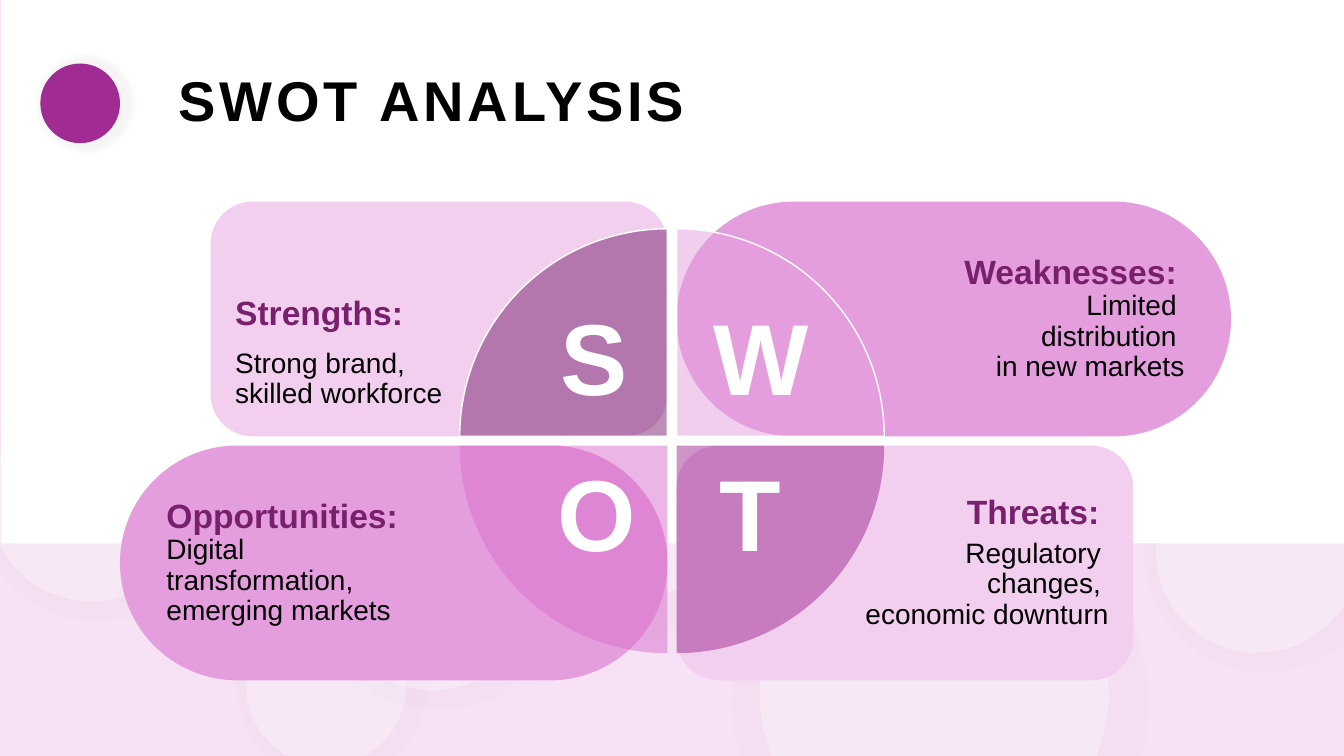
"""Build a SWOT analysis slide with four panels around a quartered circle."""
from dataclasses import dataclass
from math import acos, cos, pi, sin

from lxml import etree
from pptx import Presentation
from pptx import util as u
from pptx.dml.color import RGBColor
from pptx.enum import shapes, text
from pptx.oxml import ns

KIND = shapes.MSO_SHAPE
ALIGN = text.PP_ALIGN


@dataclass(frozen=True)
class Theme:
    font: str = "Arial"
    white: str = "FFFFFF"
    black: str = "000000"
    backdrop: str = "F7E2F5"
    pale: str = "F2CFEE"
    pink: str = "E59EDD"
    orchid: str = "D86ECC"
    purple: str = "A02B93"
    plum: str = "78206E"


THEME = Theme()
STYLES = {
    "title": (40, THEME.black, True),
    "heading": (24, THEME.plum, True),
    "body": (20, THEME.black, False),
    "spacer": (80, THEME.white, False),
    "letter": (72, THEME.white, True),
}
WIDTH, HEIGHT = 13.33, 7.5
HORIZON = 5.39
LEFT_EDGE, RIGHT_EDGE = 6.62, 6.71
UPPER_EDGE, LOWER_EDGE = 4.33, 4.42
PANEL_HEIGHT, WEDGE = 2.33, 2.06
ROUNDED, PILL = 0.179, 0.5
ARC_STEPS = 24

BUBBLES = [
    (4.21, 2.55, 3.47), (11.46, 4.45, 2.03), (-0.11, 3.94, 2.03),
    (2.44, 6.01, 1.59), (7.53, 5.13, 3.47), (3.27, 4.82, 2.03),
]
PANELS = [
    dict(right=True, lower=True, width=4.53, corner=ROUNDED, fill=THEME.pale, paragraphs=[
        [("Threats: ", "heading")],
        [("Regulatory \vchanges, \veconomic downturn", "body")]]),
    dict(right=False, lower=False, width=4.53, corner=ROUNDED, fill=THEME.pale, paragraphs=[
        [("Strengths:", "heading"), (" \v", "spacer"),
         ("Strong brand, \vskilled workforce", "body")]]),
    dict(right=False, lower=True, width=5.43, corner=PILL, fill=THEME.pink, paragraphs=[
        [("Opportunities: \v", "heading"),
         ("Digital \vtransformation, \vemerging markets", "body")]]),
    dict(right=True, lower=False, width=5.5, corner=PILL, fill=THEME.pink, paragraphs=[
        [("Weaknesses:", "heading"),
         (" \vLimited \vdistribution \vin new markets", "body")]]),
]
WEDGES = [
    dict(letter="S", right=False, lower=False, turn=0, fill=THEME.plum, body={}),
    dict(letter="O", right=False, lower=True, turn=270, fill=THEME.orchid, body={"vert": "vert"}),
    dict(letter="T", right=True, lower=True, turn=180, fill=THEME.purple, body={"rot": "10800000"}),
    dict(letter="W", right=True, lower=False, turn=90, fill=THEME.pink, body={"vert": "vert270"}),
]


def apply(target, **values):
    """Set each named attribute on the target."""
    for name, value in values.items():
        setattr(target, name, value)


def add_node(parent, tag, **attributes):
    """Append a DrawingML element."""
    return etree.SubElement(parent, ns.qn(f"a:{tag}"), {k: str(v) for k, v in attributes.items()})


def paint(shape, color, opacity=100, shadow=False):
    """Give a shape its fill, no outline and an optional soft shadow."""
    shape.shadow.inherit = False
    shape.fill.solid()
    shape.fill.fore_color.rgb = RGBColor.from_string(color)
    shape.line.fill.background()
    properties = shape._element.spPr
    if opacity < 100:
        add_node(properties.find(f"{ns.qn('a:solidFill')}/{ns.qn('a:srgbClr')}"),
                 "alpha", val=opacity * 1000)
    if shadow:
        glow = add_node(properties.find(ns.qn("a:effectLst")), "outerShdw",
                        blurRad=u.Pt(4), dist=u.Pt(4), dir=0, sx=119000, sy=119000,
                        algn="ctr", rotWithShape=0)
        add_node(add_node(glow, "srgbClr", val=THEME.black), "alpha", val=4000)
    return shape


def add_preset(slide, kind, *box):
    """Add a preset shape from lengths in inches."""
    return slide.shapes.add_shape(kind, *map(u.Inches, box))


def add_bubble(slide, left, top, size):
    """Add a circle, cut straight where it meets a slide edge."""
    radius = size / 2
    x, y = left + radius, top + radius
    reach, facing = min((WIDTH - x, 0), (HEIGHT - y, pi / 2), (x, pi))
    if reach >= radius:
        bubble = add_preset(slide, KIND.OVAL, left, top, size, size)
    else:
        half = acos(reach / radius)
        angles = [facing + half + 2 * (pi - half) * step / ARC_STEPS
                  for step in range(ARC_STEPS + 1)]
        rim = [(u.Inches(x + radius * cos(angle)), u.Inches(y + radius * sin(angle)))
               for angle in angles]
        outline = slide.shapes.build_freeform(*rim[0])
        outline.add_line_segments(rim[1:], close=True)
        bubble = outline.convert_to_shape()
    paint(bubble, THEME.white, 30, shadow=True)


def write(paragraph, pieces, align, **spacing):
    """Fill a paragraph with styled pieces and their line breaks."""
    apply(paragraph, alignment=align, **spacing)
    for words, style in pieces:
        size, color, bold = STYLES[style]
        for number, line in enumerate(words.split("\v")):
            if number:
                paragraph.add_line_break()
            if line:
                run = paragraph.add_run()
                run.text = line
                apply(run.font, name=THEME.font, size=u.Pt(size), bold=bold)
                run.font.color.rgb = RGBColor.from_string(color)


def frame_of(shape, inset):
    """Prepare the text frame of a shape."""
    frame = shape.text_frame
    apply(frame, word_wrap=True, vertical_anchor=text.MSO_ANCHOR.MIDDLE)
    for side in ("left", "right", "top", "bottom"):
        setattr(frame, f"margin_{side}", u.Inches(inset))
    return frame


def corner_of(part, width, height):
    """Place a part against the centre cross in its quadrant."""
    return (RIGHT_EDGE if part["right"] else LEFT_EDGE - width,
            LOWER_EDGE if part["lower"] else UPPER_EDGE - height, width, height)


def add_title(slide, words):
    """Place the title in front of the white band."""
    title = slide.shapes.title
    apply(title, left=u.Inches(1.67), top=u.Inches(0.49),
          width=u.Inches(10.75), height=u.Inches(1.08))
    apply(title.text_frame, word_wrap=True, auto_size=text.MSO_AUTO_SIZE.NONE,
          vertical_anchor=text.MSO_ANCHOR.MIDDLE)
    heading = title.text_frame.paragraphs[0]
    write(heading, [(words, "title")], ALIGN.LEFT, line_spacing=0.88)
    heading.runs[0]._r.get_or_add_rPr().set("spc", "280")
    slide.shapes._spTree.append(title._element)


def add_panel(slide, panel):
    """Add a rounded panel with a heading and its details."""
    box = corner_of(panel, panel["width"], PANEL_HEIGHT)
    shape = paint(add_preset(slide, KIND.ROUNDED_RECTANGLE, *box), panel["fill"])
    shape.adjustments[0] = panel["corner"]
    frame = frame_of(shape, 0.12)
    align = ALIGN.RIGHT if panel["right"] else ALIGN.LEFT
    for number, pieces in enumerate(panel["paragraphs"]):
        paragraph = frame.add_paragraph() if number else frame.paragraphs[0]
        write(paragraph, pieces, align, line_spacing=0.9, space_after=u.Pt(5.2))


def add_wedge(slide, wedge):
    """Add a quarter circle with its upright letter."""
    shape = add_preset(slide, KIND.PIE_WEDGE, *corner_of(wedge, WEDGE, WEDGE))
    paint(shape, wedge["fill"], 50).rotation = wedge["turn"]
    if not wedge["lower"]:
        shape.line.color.rgb = RGBColor.from_string(THEME.white)
        shape.line.width = u.Pt(1)
    frame = frame_of(shape, 0.37)
    for name, value in wedge["body"].items():
        frame._txBody.bodyPr.set(name, value)
    write(frame.paragraphs[0], [(wedge["letter"], "letter")], ALIGN.CENTER,
          line_spacing=0.9, space_after=u.Pt(19.7))


def main():
    """Assemble and save the slide."""
    deck = Presentation()
    apply(deck, slide_width=u.Inches(WIDTH), slide_height=u.Inches(HEIGHT))
    slide = deck.slides.add_slide(deck.slide_layouts[5])
    slide.background.fill.solid()
    slide.background.fill.fore_color.rgb = RGBColor.from_string(THEME.backdrop)
    for bubble in BUBBLES:
        add_bubble(slide, *bubble)
    paint(add_preset(slide, KIND.RECTANGLE, 0.01, 0, WIDTH - 0.01, HORIZON), THEME.white)
    add_title(slide, "SWOT ANALYSIS")
    paint(add_preset(slide, KIND.OVAL, 0.4, 0.63, 0.79, 0.79), THEME.purple, shadow=True)
    for panel in PANELS:
        add_panel(slide, panel)
    for wedge in WEDGES:
        add_wedge(slide, wedge)
    deck.save("out.pptx")


if __name__ == "__main__":
    main()
